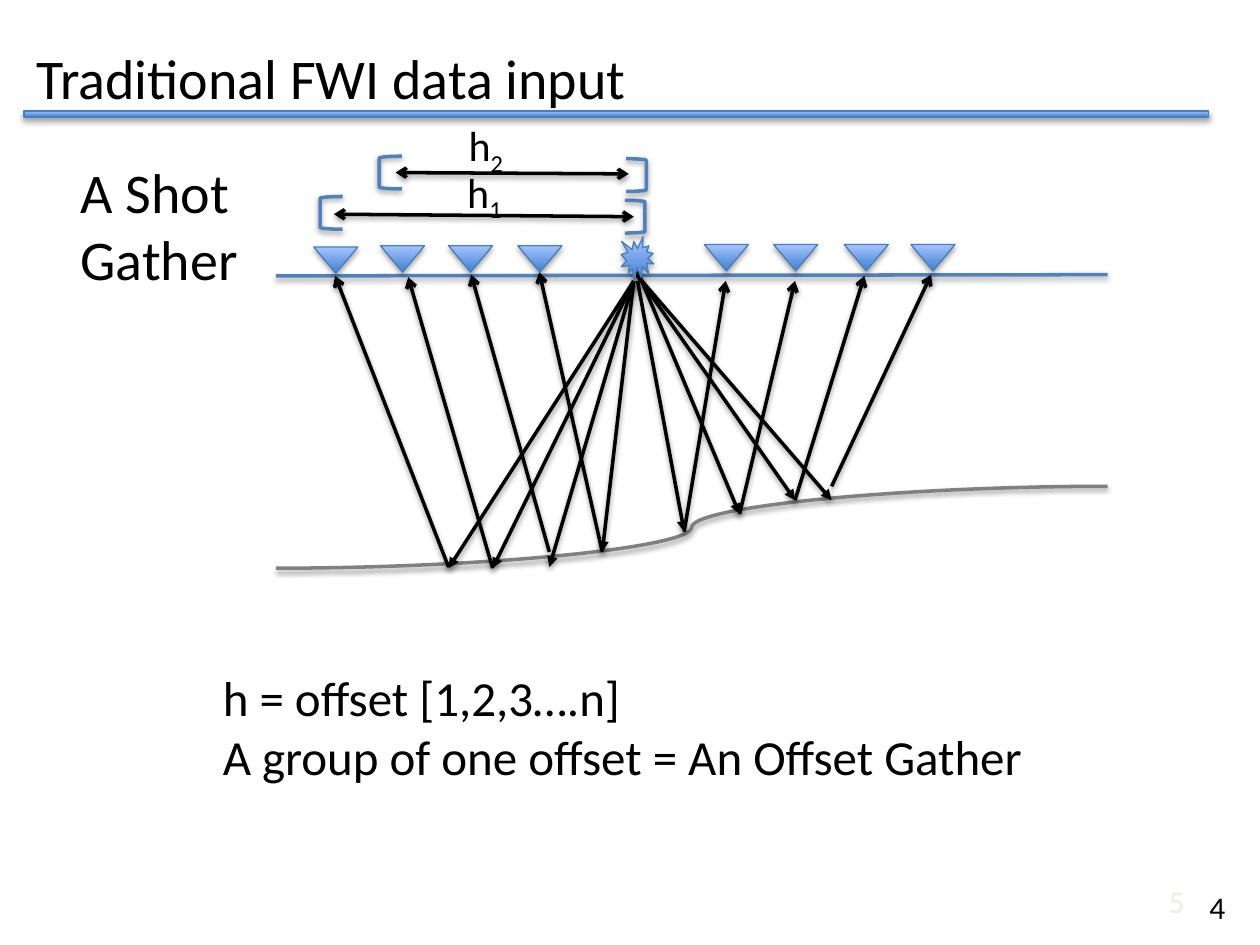
import lxml.etree
import pptx
import pptx.util
import pptx.dml.color
import pptx.enum.shapes
import pptx.enum.text
import pptx.oxml
import pptx.oxml.ns

deck = pptx.Presentation()
deck.slide_width = pptx.util.Inches(10)
deck.slide_height = pptx.util.Inches(7.5)
slide = deck.slides.add_slide(deck.slide_layouts[6])

# The grid has 100 columns and 75 rows of square cells
CELL = deck.slide_width // 100
PRESET = pptx.enum.shapes.MSO_SHAPE
CONNECTOR = pptx.enum.shapes.MSO_CONNECTOR
BLACK, BLUE, GREY = "000000", "4F81BD", "808080"


def colour(hex_string):
    return pptx.dml.color.RGBColor.from_string(hex_string)


def write(text, column, row, columns, rows, size=32, ink=BLACK, subscript="",
          wrap=False, align=pptx.enum.text.PP_ALIGN.LEFT):
    box = slide.shapes.add_textbox(*(round(n * CELL) for n in (column, row, columns, rows)))
    frame = box.text_frame
    frame.word_wrap = wrap
    frame.text = text
    if subscript:
        lowered = frame.paragraphs[0].add_run()
        lowered.text = subscript
        lowered.font._element.set("baseline", "-25000")
    for paragraph in frame.paragraphs:
        paragraph.alignment = align
        for run in paragraph.runs:
            run.font.name = "Calibri"
            run.font.size = pptx.util.Pt(size)
            run.font.color.rgb = colour(ink)


# Surface, reflector and offset arrows: start, end, ink, head, tail
lines = [
    ((21.9, 21.9), (87.9, 21.8), BLUE, None, None),
    ((21.9, 45.1), (87.9, 38.6), GREY, None, None),
    ((26.5, 17), (50.3, 17.2), BLACK, "arrow", "arrow"),
    ((31.4, 13.7), (49.9, 13.8), BLACK, "arrow", "arrow"),
]

# Rays: source, reflection point, start of the upgoing leg, receiver
rays = [
    ((50.3, 22.3), (35.6, 45.1), (35.6, 45), (26.6, 21.9)),
    ((50.3, 22.3), (39.1, 45.1), (39.1, 45.1), (32.4, 22)),
    ((50.3, 22.3), (43.6, 45), (43.6, 43.8), (37.4, 21.8)),
    ((50.3, 22.3), (47.8, 43.8), (47.8, 43.8), (42.8, 21.6)),
    ((50.6, 22.3), (54.3, 42.2), (54.3, 42.2), (57.6, 22.3)),
    ((50.6, 21.5), (58.7, 40.8), (58.7, 40.8), (63.1, 22.3)),
    ((50.4, 21.6), (63.1, 39.7), (63.1, 39.7), (68.6, 21.9)),
    ((50.6, 21.9), (66, 39.7), (66, 38.6), (73.9, 21.8)),
]
for source, reflection, upgoing, receiver in rays:
    lines.append((source, reflection, BLACK, None, "triangle"))
    lines.append((upgoing, receiver, BLACK, None, "arrow"))

for start, end, ink, head, tail in lines:
    kind = CONNECTOR.CURVE if ink == GREY else CONNECTOR.STRAIGHT
    line = slide.shapes.add_connector(kind, *(round(n * CELL) for n in start + end))
    line.line.width = pptx.util.Pt(2)
    line.line.color.rgb = colour(ink)
    outline = line._element.spPr.find(pptx.oxml.ns.qn("a:ln"))
    for tag, arrow in (("a:headEnd", head), ("a:tailEnd", tail)):
        if arrow:
            lxml.etree.SubElement(outline, pptx.oxml.ns.qn(tag), type=arrow)

# Offset brackets, the right-hand ones mirrored
for column, row, columns, mirrored in [
    (25.4, 15.6, 1.8, False), (49.6, 15.9, 1.6, True),
    (30.1, 12.4, 1.8, False), (49.7, 12.6, 1.6, True),
]:
    bracket = slide.shapes.add_shape(
        PRESET.LEFT_BRACKET, *(round(n * CELL) for n in (column, row, columns, 2.6)))
    bracket.fill.background()
    bracket.line.color.rgb = colour(BLUE)
    bracket.line.width = pptx.util.Pt(2)
    if mirrored:
        bracket._element.spPr.xfrm.set("flipH", "1")

# Receivers, shot and title rule share a gradient
solids = [
    (PRESET.FLOWCHART_MERGE, (column, row, 3.5, 2.1))
    for column, row in [(24.9, 19.6), (30.2, 19.5), (35.6, 19.5), (41.1, 19.5),
                        (55.9, 19.4), (61.4, 19.4), (67, 19.4), (72.3, 19.4)]
]
solids.append((PRESET.EXPLOSION1, (49.3, 18.8, 2.6, 3.5)))
solids.append((PRESET.RECTANGLE, (1.9, 8.8, 94, 0.5)))
for preset, place in solids:
    solid = slide.shapes.add_shape(preset, *(round(n * CELL) for n in place))
    solid.fill.gradient()
    solid.fill.gradient_angle = 90
    for stop, ink in zip(solid.fill.gradient_stops, ("3F80CE", "A4C4FF")):
        stop.color.rgb = colour(ink)
    solid.line.color.rgb = colour("4B7EBC")
    solid.line.width = pptx.util.Pt(0.75)

# Soft shadow straight below everything drawn so far
for drawn in slide.shapes:
    graded = drawn._element.spPr.find(pptx.oxml.ns.qn("a:gradFill")) is not None
    distance, opacity = (23000, 35000) if graded else (20000, 38000)
    drawn._element.spPr.append(pptx.oxml.parse_xml(
        f'<a:effectLst {pptx.oxml.ns.nsdecls("a")}>'
        f'<a:outerShdw blurRad="40000" dist="{distance}" dir="5400000" rotWithShape="0">'
        f'<a:srgbClr val="{BLACK}"><a:alpha val="{opacity}"/></a:srgbClr>'
        '</a:outerShdw></a:effectLst>'))

# Title, labels and page numbers
write("Traditional FWI data input", 1.9, 3, 90, 7.3, wrap=True)
write("A Shot\nGather", 5.4, 12, 14.7, 11.8)
write("h", 36.1, 12.7, 4.9, 5, size=24, subscript="1")
write("h", 36.2, 9, 4.9, 5, size=24, subscript="2")
write("h = offset [1,2,3….n]\nA group of one offset = An Offset Gather",
      16.7, 52.5, 66.4, 10.4, size=28)
write("5", 85, 69.5, 10, 4, size=18, ink="EEECE1", wrap=True,
      align=pptx.enum.text.PP_ALIGN.RIGHT)
write("4", 95, 70, 3.3, 4, size=18)

deck.save("out.pptx")
